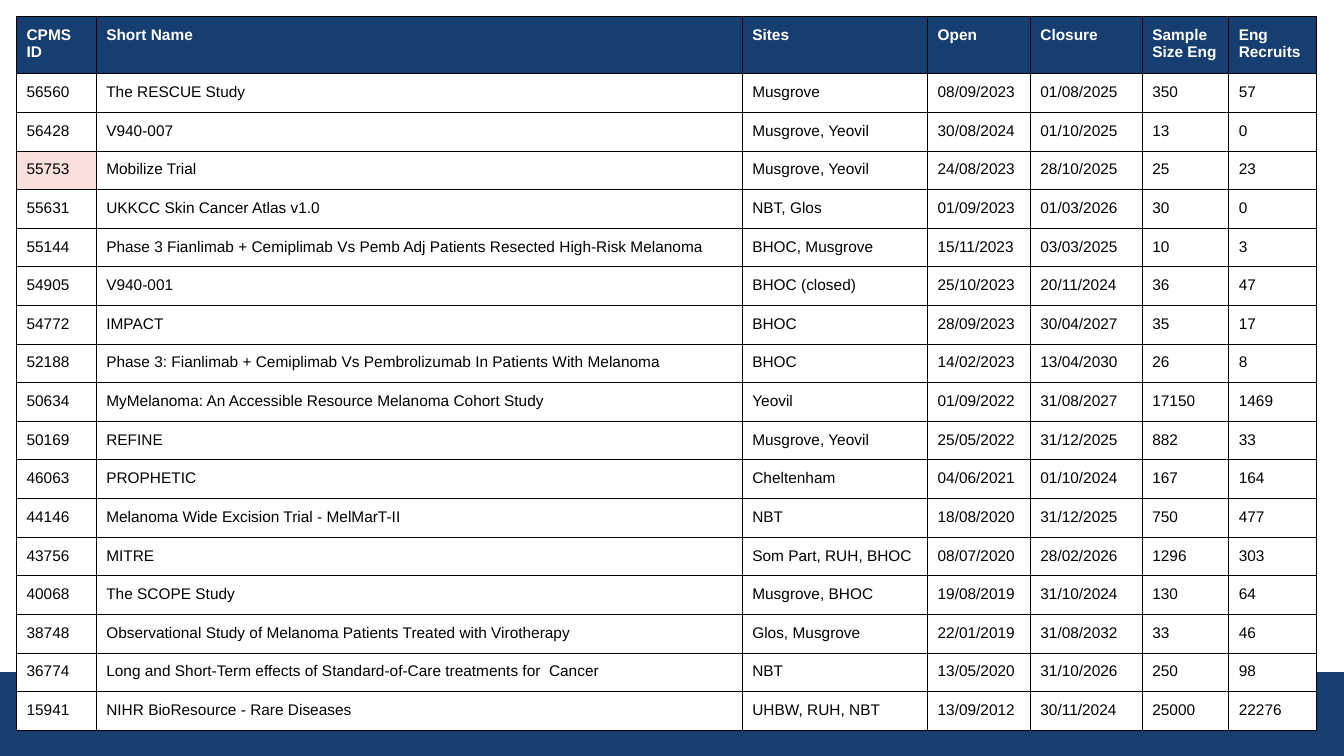
import dataclasses

import lxml.etree
import pptx
import pptx.dml.color
import pptx.enum.shapes
import pptx.oxml.ns
import pptx.util

Cm = pptx.util.Cm
qn = pptx.oxml.ns.qn


@dataclasses.dataclass(frozen=True)
class Theme:
    font: str = "Arial"
    text_size: float = 11
    border_width: float = 0.75
    cell_margin: float = 0.25
    band: str = "193E72"
    header: str = "173E71"
    header_text: str = "FFFFFF"
    body: str = "FFFFFF"
    body_text: str = "000000"
    highlight: str = "FBDFDC"
    border: str = "000000"


PAGE_WIDTH, PAGE_HEIGHT = 33.87, 19.05
BAND_HEIGHT = 2.11
TABLE_LEFT, TABLE_TOP, TABLE_BOTTOM = 0.42, 0.42, 18.41
HEADER_HEIGHT = 1.44
COLUMN_WIDTHS = [2.01, 16.28, 4.67, 2.59, 2.82, 2.18, 2.21]
HIGHLIGHTED_IDS = {"55753"}

HEADINGS = ["CPMS ID", "Short Name", "Sites", "Open", "Closure", "Sample Size Eng", "Eng Recruits"]
STUDIES = [
    ["56560", "The RESCUE Study", "Musgrove", "08/09/2023", "01/08/2025", "350", "57"],
    ["56428", "V940-007", "Musgrove, Yeovil", "30/08/2024", "01/10/2025", "13", "0"],
    ["55753", "Mobilize Trial", "Musgrove, Yeovil", "24/08/2023", "28/10/2025", "25", "23"],
    ["55631", "UKKCC Skin Cancer Atlas v1.0", "NBT, Glos", "01/09/2023", "01/03/2026", "30", "0"],
    ["55144", "Phase 3 Fianlimab + Cemiplimab Vs Pemb Adj Patients Resected High-Risk Melanoma",
     "BHOC, Musgrove", "15/11/2023", "03/03/2025", "10", "3"],
    ["54905", "V940-001", "BHOC (closed)", "25/10/2023", "20/11/2024", "36", "47"],
    ["54772", "IMPACT", "BHOC", "28/09/2023", "30/04/2027", "35", "17"],
    ["52188", "Phase 3: Fianlimab + Cemiplimab Vs Pembrolizumab In Patients With Melanoma",
     "BHOC", "14/02/2023", "13/04/2030", "26", "8"],
    ["50634", "MyMelanoma: An Accessible Resource Melanoma Cohort Study",
     "Yeovil", "01/09/2022", "31/08/2027", "17150", "1469"],
    ["50169", "REFINE", "Musgrove, Yeovil", "25/05/2022", "31/12/2025", "882", "33"],
    ["46063", "PROPHETIC", "Cheltenham", "04/06/2021", "01/10/2024", "167", "164"],
    ["44146", "Melanoma Wide Excision Trial - MelMarT-II", "NBT", "18/08/2020", "31/12/2025", "750", "477"],
    ["43756", "MITRE", "Som Part, RUH, BHOC", "08/07/2020", "28/02/2026", "1296", "303"],
    ["40068", "The SCOPE Study", "Musgrove, BHOC", "19/08/2019", "31/10/2024", "130", "64"],
    ["38748", "Observational Study of Melanoma Patients Treated with Virotherapy",
     "Glos, Musgrove", "22/01/2019", "31/08/2032", "33", "46"],
    ["36774", "Long and Short-Term effects of Standard-of-Care treatments for  Cancer",
     "NBT", "13/05/2020", "31/10/2026", "250", "98"],
    ["15941", "NIHR BioResource - Rare Diseases", "UHBW, RUH, NBT", "13/09/2012", "30/11/2024", "25000", "22276"],
]


def rgb(value):
    return pptx.dml.color.RGBColor.from_string(value)


class PageBuilder:
    def __init__(self, page, theme):
        self.page = page
        self.theme = theme

    def band(self, left, top, width, height):
        band = self.page.shapes.add_shape(
            pptx.enum.shapes.MSO_SHAPE.RECTANGLE, Cm(left), Cm(top), Cm(width), Cm(height))
        band.shadow.inherit = False
        band.fill.solid()
        band.fill.fore_color.rgb = rgb(self.theme.band)
        band.line.fill.background()

    def table(self, left, top, widths, heights, rows):
        frame = self.page.shapes.add_table(
            len(rows), len(widths), Cm(left), Cm(top), Cm(sum(widths)), Cm(sum(heights)))
        table = frame.table
        table.horz_banding = False
        for column, width in zip(table.columns, widths):
            column.width = Cm(width)
        for row, height in zip(table.rows, heights):
            row.height = Cm(height)
        for row_index, values in enumerate(rows):
            for column_index, text in enumerate(values):
                self.cell(table.cell(row_index, column_index), text, row_index == 0)

    def cell(self, cell, text, is_header):
        theme = self.theme
        margin = Cm(theme.cell_margin)
        cell.margin_left = cell.margin_right = cell.margin_top = cell.margin_bottom = margin
        self.borders(cell)
        fill = theme.header if is_header else theme.highlight if text in HIGHLIGHTED_IDS else theme.body
        cell.fill.solid()
        cell.fill.fore_color.rgb = rgb(fill)
        span = cell.text_frame.paragraphs[0].add_run()
        span.text = text
        span.font.name = theme.font
        span.font.size = pptx.util.Pt(theme.text_size)
        span.font.bold = is_header
        span.font.color.rgb = rgb(theme.header_text if is_header else theme.body_text)

    def borders(self, cell):
        properties = cell._tc.get_or_add_tcPr()
        width = str(pptx.util.Pt(self.theme.border_width))
        for side in ("L", "R", "T", "B"):
            line = lxml.etree.SubElement(properties, qn("a:ln" + side), w=width)
            fill = lxml.etree.SubElement(line, qn("a:solidFill"))
            lxml.etree.SubElement(fill, qn("a:srgbClr"), val=self.theme.border)


def main():
    deck = pptx.Presentation()
    deck.slide_width = Cm(PAGE_WIDTH)
    deck.slide_height = Cm(PAGE_HEIGHT)
    builder = PageBuilder(deck.slides.add_slide(deck.slide_layouts[6]), Theme())
    builder.band(0, PAGE_HEIGHT - BAND_HEIGHT, PAGE_WIDTH, BAND_HEIGHT)
    study_height = (TABLE_BOTTOM - TABLE_TOP - HEADER_HEIGHT) / len(STUDIES)
    heights = [HEADER_HEIGHT] + [study_height] * len(STUDIES)
    builder.table(TABLE_LEFT, TABLE_TOP, COLUMN_WIDTHS, heights, [HEADINGS] + STUDIES)
    deck.save("out.pptx")


if __name__ == "__main__":
    main()
